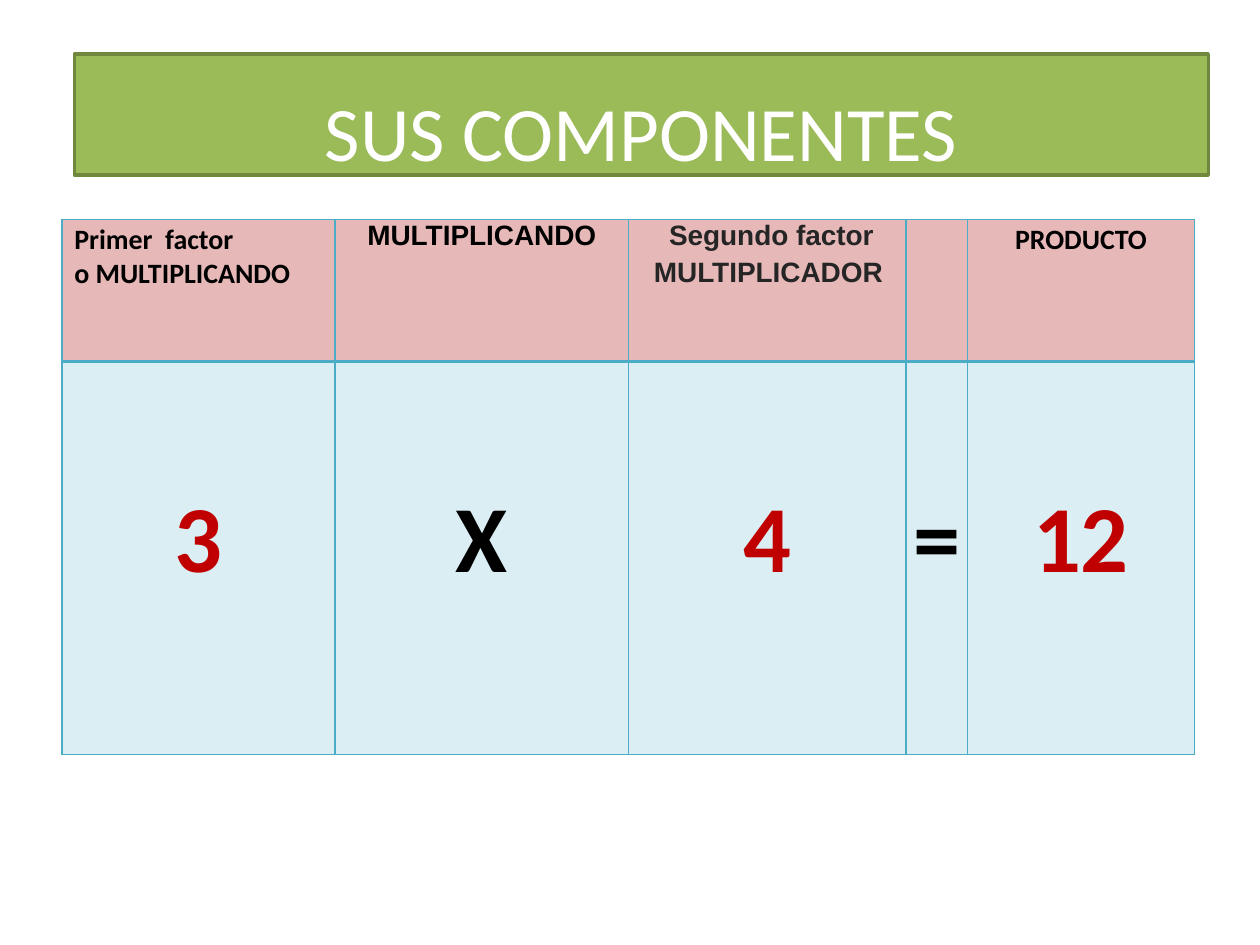
from lxml.etree import SubElement
from pptx import Presentation
from pptx.dml.color import RGBColor as RGB
from pptx.enum.shapes import MSO_SHAPE as SHAPE
from pptx.enum.text import MSO_ANCHOR as ANCHOR, PP_ALIGN as ALIGN
from pptx.oxml.ns import qn
from pptx.util import Inches, Pt

COLORS = {
    "green": "9BBA58", "olive": "70883E", "white": "FFFFFF", "black": "000000",
    "gray": "252525", "red": "C00000", "pink": "E6B8B8", "ice": "DAEEF3",
    "teal": "4AACC5",
}
TITLE = "SUS COMPONENTES"
HEADERS = [
    ([("Primer  factor\vo MULTIPLICANDO", 0.1)], "Calibri", "black", 0.03),
    ([("MULTIPLICANDO", None)], "Arial", "black", 0.01),
    ([("Segundo factor", 0.32), ("MULTIPLICADOR", 0.2)], "Arial", "gray", 0.01),
    ([], "Calibri", "black", 0),
    ([("PRODUCTO", None)], "Calibri", "black", 0.03),
]
OPERATION = [("3", "red", None), ("X", "black", None), ("4", "red", None),
             ("=", "black", 0.06), ("12", "red", None)]
COLS = [2.17, 2.33, 2.2, 0.49, 1.8]
ROWS = [1.13, 3.12]
THIN, THICK = 1, 2.25
SECOND_LINE_GAP = 3.2
ROW_STYLES = [
    {"fill": "pink", "size": 16, "edges": {"L": THIN, "R": THIN, "T": THIN, "B": THICK}},
    {"fill": "ice", "size": 54, "edges": {"L": THIN, "R": THIN, "T": THICK, "B": THIN}},
]


def rgb(name):
    return RGB.from_string(COLORS[name])


def write(p, text, color, **fmt):
    p.text = text
    for r in p.runs:
        r.font.color.rgb = rgb(color)
        for key, value in fmt.items():
            setattr(r.font, key, value)


def set_margins(obj, top):
    for side in ("left", "right", "bottom"):
        setattr(obj, f"margin_{side}", 0)
    obj.margin_top = Inches(top)


def set_edges(cell, edges):
    tc_pr = cell._tc.get_or_add_tcPr()
    for side, width in edges.items():
        ln = SubElement(tc_pr, qn(f"a:ln{side}"), w=str(Pt(width)))
        fill = SubElement(ln, qn("a:solidFill"))
        SubElement(fill, qn("a:srgbClr"), val=COLORS["teal"])


def fill_cell(cell, lines, font, color, top, style):
    set_edges(cell, style["edges"])
    cell.fill.solid()
    cell.fill.fore_color.rgb = rgb(style["fill"])
    set_margins(cell, top)
    tf = cell.text_frame
    for i, (text, indent) in enumerate(lines):
        p = tf.add_paragraph() if i else tf.paragraphs[0]
        write(p, text, color, name=font, size=Pt(style["size"]), bold=True)
        if i:
            p.space_before = Pt(SECOND_LINE_GAP)
        if indent is None:
            p.alignment = ALIGN.CENTER
        else:
            p._p.get_or_add_pPr().set("marL", str(Inches(indent)))


def add_title(slide):
    sp = slide.shapes.add_shape(
        SHAPE.RECTANGLE, *map(Inches, (0.59, 0.43, 9, 0.96)))
    sp.shadow.inherit = False
    sp.fill.solid()
    sp.fill.fore_color.rgb = rgb("green")
    sp.line.color.rgb = rgb("olive")
    sp.line.width = Pt(2)
    tf = sp.text_frame
    tf.word_wrap = True
    tf.vertical_anchor = ANCHOR.TOP
    set_margins(tf, 0.24)
    p = tf.paragraphs[0]
    p.alignment = ALIGN.CENTER
    write(p, TITLE, "white", name="Calibri", size=Pt(44))


def add_operation_table(slide):
    table = slide.shapes.add_table(
        len(ROWS), len(COLS),
        *map(Inches, (0.49, 1.74, sum(COLS), sum(ROWS)))).table
    table.first_row = table.horz_banding = False
    for col, width in zip(table.columns, COLS):
        col.width = Inches(width)
    for row, height in zip(table.rows, ROWS):
        row.height = Inches(height)
    body = [([(text, indent)], "Calibri", color, 0.96)
            for text, color, indent in OPERATION]
    for r, (cells, style) in enumerate(zip((HEADERS, body), ROW_STYLES)):
        for c, content in enumerate(cells):
            fill_cell(table.cell(r, c), *content, style)


def main():
    prs = Presentation()
    prs.slide_width, prs.slide_height = Inches(10), Inches(7.5)
    slide = prs.slides.add_slide(prs.slide_layouts[6])
    add_title(slide)
    add_operation_table(slide)
    prs.save("out.pptx")


if __name__ == "__main__":
    main()
